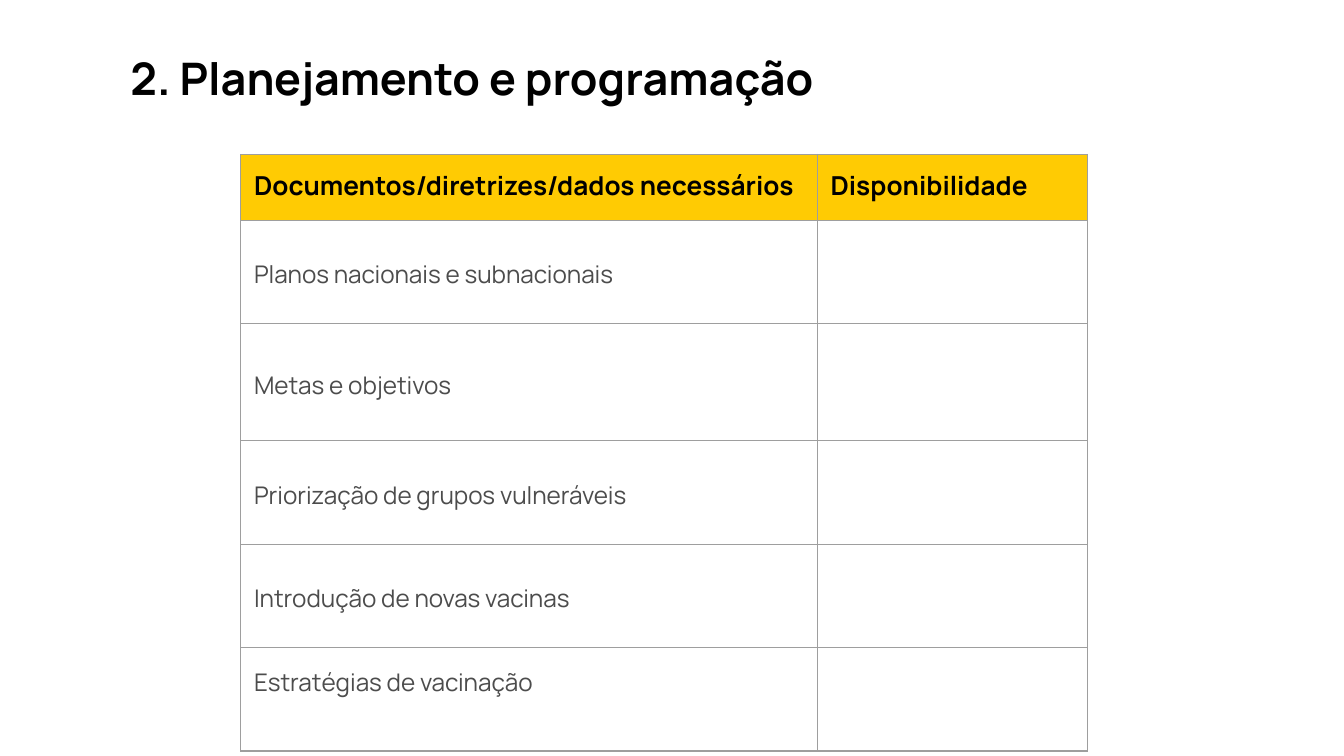
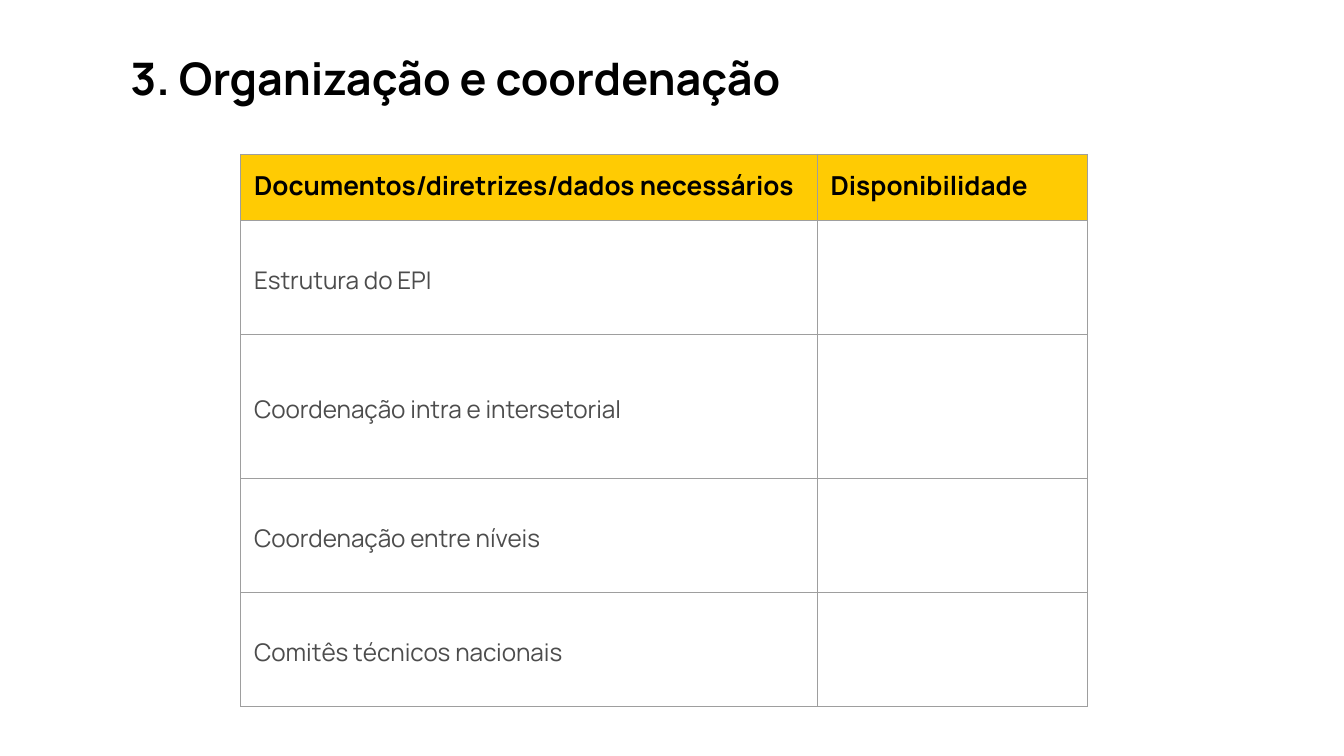
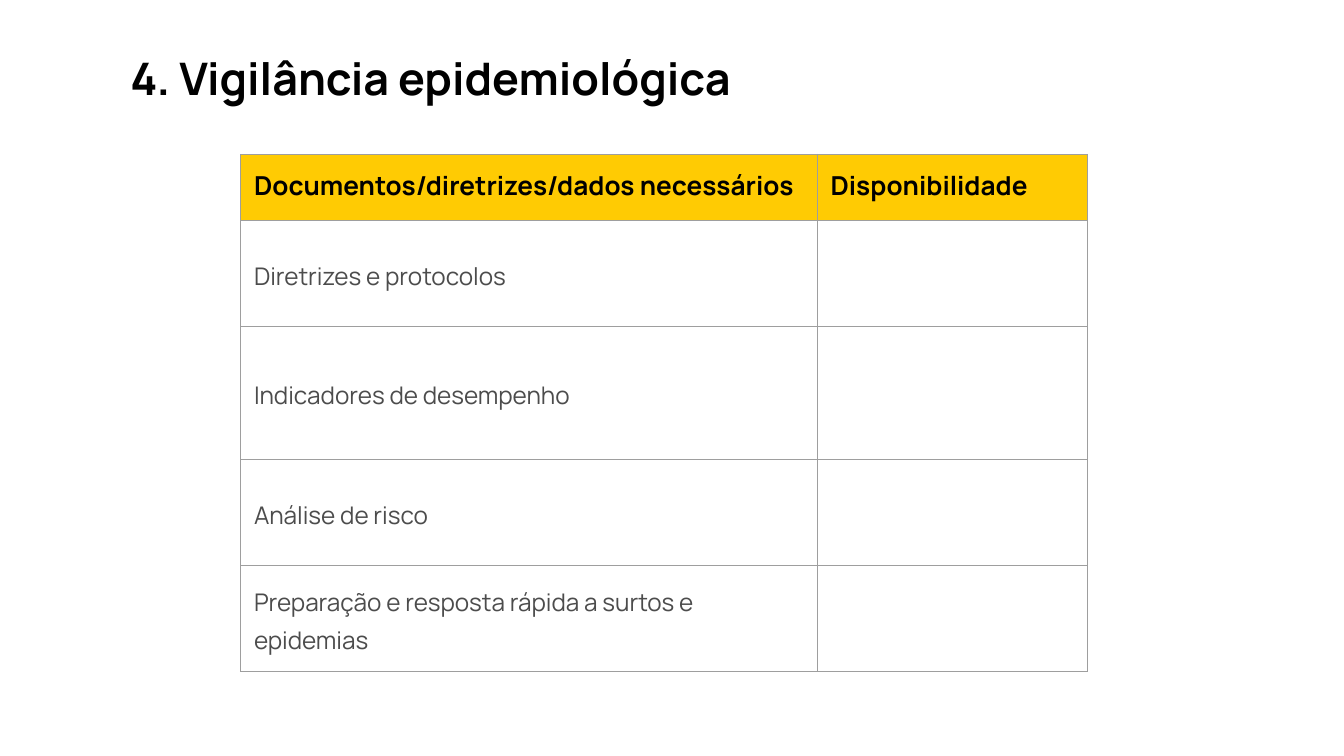
import pptx
import pptx.util
import pptx.dml.color
import pptx.enum.text
from lxml import etree
from pptx.oxml.ns import qn

Inches, Pt = pptx.util.Inches, pptx.util.Pt
ANCHOR = pptx.enum.text.MSO_ANCHOR

# Shared style
FONT = "Manrope"
BLACK, GREY, YELLOW, BORDER = "000000", "4C4C4C", "FFCB03", "9E9E9E"
TITLE_BOX = (0.87, 0.28, 7.61, 0.59)
TABLE_BOX = (1.79, 1.15, 6.3)  # left, top, width; the rows give the height
DOCUMENT_WIDTH = 4.29
HEADER_HEIGHT = 0.49
HEADINGS = ("Documentos/diretrizes/dados necessários", "Disponibilidade")
MARGIN = 0.1

# Title, then each required document with its row height and anchor
CHECKLISTS = [
    ("2. Planejamento e programação", [
        ("Planos nacionais e subnacionais", 0.77, ANCHOR.MIDDLE),
        ("Metas e objetivos", 0.87, ANCHOR.MIDDLE),
        ("Priorização de grupos vulneráveis", 0.77, ANCHOR.MIDDLE),
        ("Introdução de novas vacinas", 0.77, ANCHOR.MIDDLE),
        ("Estratégias de vacinação", 0.77, ANCHOR.TOP),
    ]),
    ("3. Organização e coordenação", [
        ("Estrutura do EPI", 0.85, ANCHOR.MIDDLE),
        ("Coordenação intra e intersetorial", 1.07, ANCHOR.MIDDLE),
        ("Coordenação entre níveis", 0.85, ANCHOR.MIDDLE),
        ("Comitês técnicos nacionais", 0.85, ANCHOR.MIDDLE),
    ]),
    ("4. Vigilância epidemiológica", [
        ("Diretrizes e protocolos", 0.79, ANCHOR.MIDDLE),
        ("Indicadores de desempenho", 0.99, ANCHOR.MIDDLE),
        ("Análise de risco", 0.79, ANCHOR.MIDDLE),
        ("Preparação e resposta rápida a surtos e epidemias", 0.79, ANCHOR.MIDDLE),
    ]),
]


def color(hex_value):
    return pptx.dml.color.RGBColor.from_string(hex_value)


def set_margins(frame):
    frame.margin_left = frame.margin_right = Inches(MARGIN)
    frame.margin_top = frame.margin_bottom = Inches(MARGIN)


def add_run(paragraph, text, size, hex_value, bold):
    run = paragraph.add_run()
    run.text = text
    run.font.name = FONT
    run.font.size = Pt(size)
    run.font.bold = bold
    run.font.color.rgb = color(hex_value)


def set_borders(cell):
    properties = cell._tc.get_or_add_tcPr()
    for position, side in enumerate(("a:lnL", "a:lnR", "a:lnT", "a:lnB")):
        line = etree.Element(qn(side), w=str(Pt(0.75)))
        fill = etree.SubElement(line, qn("a:solidFill"))
        etree.SubElement(fill, qn("a:srgbClr"), val=BORDER)
        properties.insert(position, line)


def add_title(slide, box, text):
    title = slide.shapes.title
    title.left, title.top, title.width, title.height = map(Inches, box)
    frame = title.text_frame
    frame.word_wrap = True
    frame.auto_size = pptx.enum.text.MSO_AUTO_SIZE.NONE
    frame.vertical_anchor = ANCHOR.TOP
    set_margins(frame)
    paragraph = frame.paragraphs[0]
    paragraph.alignment = pptx.enum.text.PP_ALIGN.LEFT
    add_run(paragraph, text, 24, BLACK, True)


def add_checklist(slide, box, documents):
    left, top, width = box
    heights = [HEADER_HEIGHT] + [height for _, height, _ in documents]
    table = slide.shapes.add_table(
        len(heights), 2, Inches(left), Inches(top),
        Inches(width), Inches(sum(heights))).table
    table.first_row = table.horz_banding = False
    table.columns[0].width = Inches(DOCUMENT_WIDTH)
    table.columns[1].width = Inches(width - DOCUMENT_WIDTH)
    for row, height in zip(table.rows, heights):
        row.height = Inches(height)

    for cell in table.iter_cells():
        set_margins(cell)
        cell.fill.background()
        set_borders(cell)

    # Header row
    for column, heading in enumerate(HEADINGS):
        cell = table.cell(0, column)
        cell.fill.solid()
        cell.fill.fore_color.rgb = color(YELLOW)
        add_run(cell.text_frame.paragraphs[0], heading, 14, BLACK, True)

    # Required documents; availability stays open
    for row, (document, _, anchor) in enumerate(documents, start=1):
        cell = table.cell(row, 0)
        cell.vertical_anchor = anchor
        paragraph = cell.text_frame.paragraphs[0]
        paragraph.line_spacing = 1.15
        add_run(paragraph, document, 13, GREY, False)


def add_checklist_slide(deck, title, documents):
    slide = deck.slides.add_slide(deck.slide_layouts[5])
    slide.background.fill.solid()
    slide.background.fill.fore_color.rgb = color("FFFFFF")
    add_title(slide, TITLE_BOX, title)
    add_checklist(slide, TABLE_BOX, documents)


def main():
    deck = pptx.Presentation()
    deck.slide_width = Inches(10)
    deck.slide_height = deck.slide_width * 9 // 16
    for title, documents in CHECKLISTS:
        add_checklist_slide(deck, title, documents)
    deck.save("out.pptx")


if __name__ == "__main__":
    main()
